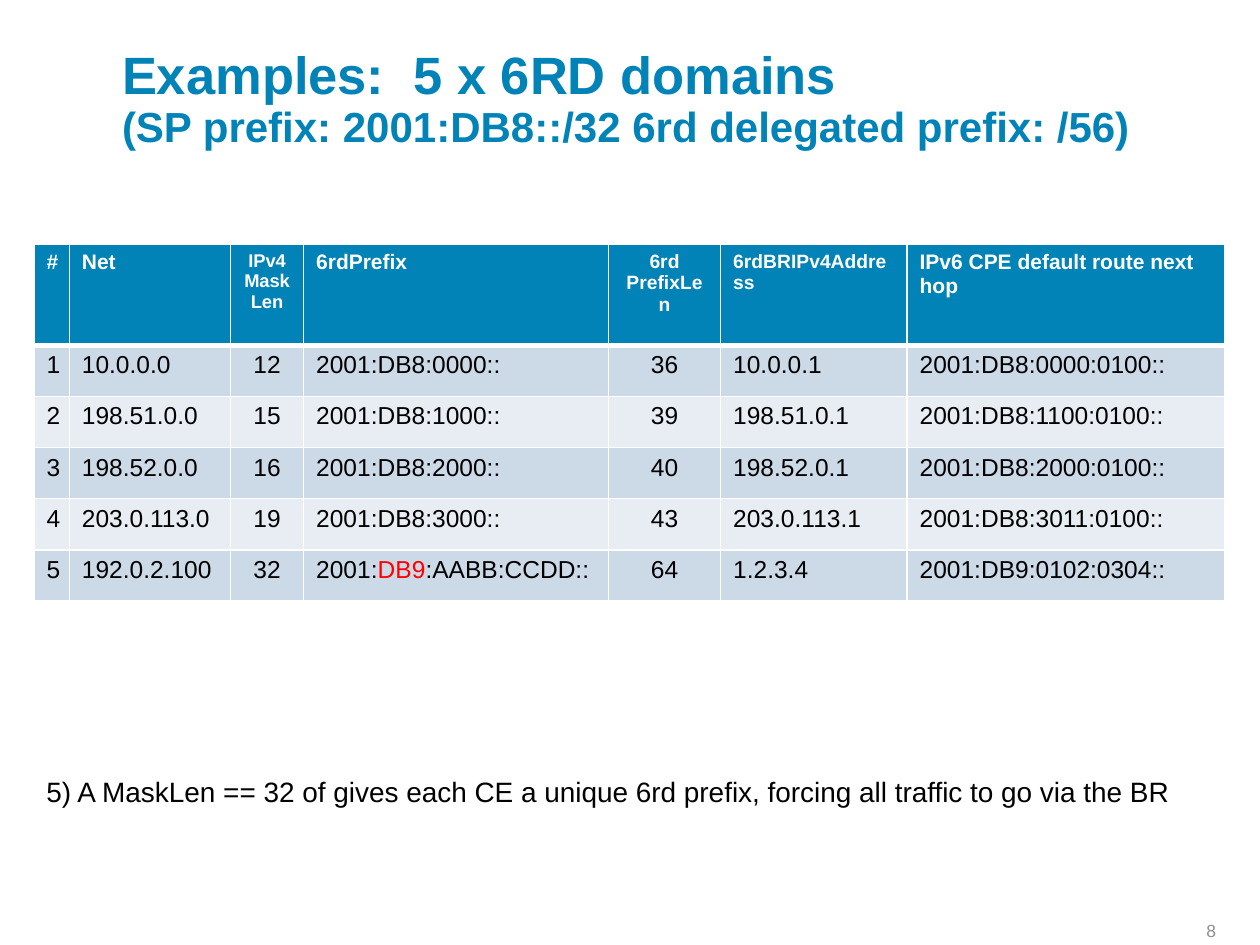
from lxml import etree
from pptx import Presentation
from pptx.dml.color import RGBColor
from pptx.enum.text import MSO_ANCHOR, PP_ALIGN
from pptx.oxml.ns import qn
from pptx.util import Inches, Pt

LEFT, CENTER, RIGHT = PP_ALIGN.LEFT, PP_ALIGN.CENTER, PP_ALIGN.RIGHT
TOP, BOTTOM = MSO_ANCHOR.TOP, MSO_ANCHOR.BOTTOM

BLUE = RGBColor(0x01, 0x83, 0xB7)
WHITE = RGBColor(0xFF, 0xFF, 0xFF)
BLACK = RGBColor(0x00, 0x00, 0x00)
RED = RGBColor(0xFF, 0x00, 0x00)
GRAY = RGBColor(0x8E, 0x8E, 0x95)
BANDS = (RGBColor(0xCC, 0xD9, 0xE6), RGBColor(0xE7, 0xED, 0xF3))

FONT = "Arial"
WIDTH, HEIGHT = 10, 7.5
MARGIN = 0.27
TABLE_TOP, TABLE_HEIGHT, HEADER_HEIGHT = 1.94, 2.83, 0.8
COLUMN_WIDTHS = (0.28, 1.28, 0.58, 2.42, 0.89, 1.48, 2.52)
CENTERED_COLUMNS = (0, 2, 4)

HEADERS = (
    ("#", 12), ("Net", 12), ("IPv4\nMaskLen", 10.5), ("6rdPrefix", 12),
    ("6rd\nPrefixLen", 11), ("6rdBRIPv4Address", 11),
    ("IPv6 CPE default route next hop", 12),
)
DOMAINS = (
    ("10.0.0.0", "12", "2001:DB8:0000::", "36", "10.0.0.1", "2001:DB8:0000:0100::"),
    ("198.51.0.0", "15", "2001:DB8:1000::", "39", "198.51.0.1", "2001:DB8:1100:0100::"),
    ("198.52.0.0", "16", "2001:DB8:2000::", "40", "198.52.0.1", "2001:DB8:2000:0100::"),
    ("203.0.113.0", "19", "2001:DB8:3000::", "43", "203.0.113.1", "2001:DB8:3011:0100::"),
    ("192.0.2.100", "32", "2001:DB9:AABB:CCDD::", "64", "1.2.3.4", "2001:DB9:0102:0304::"),
)
MARKED_PREFIX = "2001:DB9:AABB:CCDD::"
MARKED_PART = "DB9"


def add_span(para, text, size, color, bold=False):
    """Append one formatted run to a paragraph."""
    span = para.add_run()
    span.text = text
    span.font.name = FONT
    span.font.size = Pt(size)
    span.font.bold = bold
    span.font.color.rgb = color


def write(frame, text, size=14, color=BLACK, bold=False, align=LEFT, marked=None):
    """Fill a text frame, one paragraph per line, with the marked part in red."""
    for index, line in enumerate(text.split("\n")):
        para = frame.paragraphs[0] if index == 0 else frame.add_paragraph()
        para.alignment = align
        before, found, after = line.partition(marked) if marked else (line, "", "")
        for part, shade in ((before, color), (found, RED), (after, color)):
            if part:
                add_span(para, part, size, shade, bold)


def add_box(page, left, top, width, height, anchor=TOP, wrap=False, inset=0.05):
    """Add a text box and return its text frame."""
    box = page.shapes.add_textbox(*map(Inches, (left, top, width, height)))
    frame = box.text_frame
    frame.word_wrap = wrap
    frame.vertical_anchor = anchor
    frame.margin_top = frame.margin_bottom = Inches(inset)
    return frame


def add_title(page):
    """Add the two-line title with a smaller second line."""
    frame = add_box(page, 0.87, 0.33, 8.41, 0.92, anchor=BOTTOM, wrap=True)
    para = frame.paragraphs[0]
    para.line_spacing = 0.9
    add_span(para, "Examples:  5 x 6RD domains", 30, BLUE, True)
    para.add_line_break()
    add_span(para, "(SP prefix: 2001:DB8::/32 6rd delegated prefix: /56)", 24, BLUE, True)


def style_cell(cell, fill, bottom=1, top=1):
    """Set a cell's fill and its white borders."""
    cell.fill.solid()
    cell.fill.fore_color.rgb = fill
    properties = cell._tc.get_or_add_tcPr()
    sides = (("a:lnL", 1), ("a:lnR", 1), ("a:lnT", top), ("a:lnB", bottom))
    for index, (side, points) in enumerate(sides):
        line = etree.Element(qn(side), w=str(Pt(points)))
        solid = etree.SubElement(line, qn("a:solidFill"))
        etree.SubElement(solid, qn("a:srgbClr"), val=str(WHITE))
        properties.insert(index, line)


def add_domain_table(page):
    """Add the table of 6rd domains."""
    size = (len(DOMAINS) + 1, len(COLUMN_WIDTHS))
    place = map(Inches, (MARGIN, TABLE_TOP, sum(COLUMN_WIDTHS), TABLE_HEIGHT))
    table = page.shapes.add_table(*size, *place).table
    for column, width in zip(table.columns, COLUMN_WIDTHS):
        column.width = Inches(width)
    for row in table.rows:
        row.height = Inches((TABLE_HEIGHT - HEADER_HEIGHT) / len(DOMAINS))
    table.rows[0].height = Inches(HEADER_HEIGHT)

    aligns = [CENTER if c in CENTERED_COLUMNS else LEFT for c in range(size[1])]
    for c, (text, points) in enumerate(HEADERS):
        cell = table.cell(0, c)
        style_cell(cell, BLUE, bottom=3)
        write(cell.text_frame, text, size=points, color=WHITE, bold=True, align=aligns[c])
    for r, domain in enumerate(DOMAINS, start=1):
        for c, text in enumerate((str(r), *domain)):
            cell = table.cell(r, c)
            style_cell(cell, BANDS[(r - 1) % 2], top=3 if r == 1 else 1)
            marked = MARKED_PART if text == MARKED_PREFIX else None
            write(cell.text_frame, text, align=aligns[c], marked=marked)


def main():
    """Build the slide and save it."""
    deck = Presentation()
    deck.slide_width, deck.slide_height = Inches(WIDTH), Inches(HEIGHT)
    page = deck.slides.add_slide(deck.slide_layouts[6])
    number = add_box(page, 9.4, 7.25, 0.35, 0.26, anchor=BOTTOM, inset=0.04)
    write(number, "8", size=10, color=GRAY, align=RIGHT)
    add_title(page)
    add_domain_table(page)
    remark = add_box(page, MARGIN, 6.1, 9.23, 0.37)
    write(remark, "5) A MaskLen == 32 of gives each CE a unique 6rd prefix, "
                  "forcing all traffic to go via the BR", size=16)
    deck.save("out.pptx")


if __name__ == "__main__":
    main()
